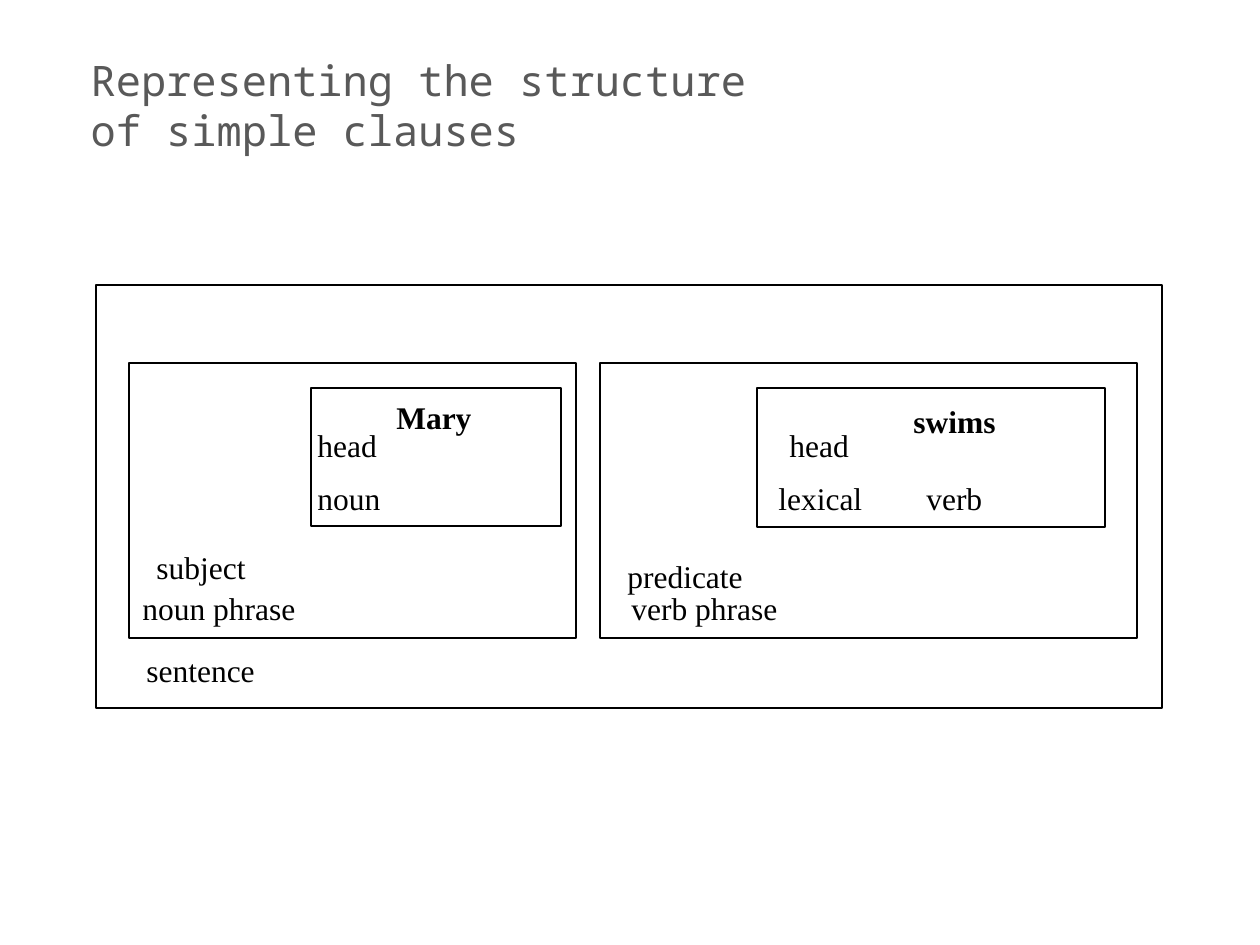
from pptx import Presentation
from pptx import util as u
from pptx.dml.color import RGBColor
from pptx.enum import shapes, text

PX = 914400 / 126
SERIF = "Times New Roman"
ROW = 63


def px(*nums):
    return [u.Emu(round(n * PX)) for n in nums]


def paint(color, code):
    color.rgb = RGBColor.from_string(code)


def style(par, face, size, code, bold=False):
    par.alignment = text.PP_ALIGN.LEFT
    par.font.name = face
    par.font.size = u.Pt(size)
    par.font.bold = bold
    paint(par.font.color, code)


def title(slide, box, words):
    shape = slide.shapes.title
    shape.left, shape.top, shape.width, shape.height = px(*box)
    frame = shape.text_frame
    frame.text = words
    frame.word_wrap = True
    frame.auto_size = text.MSO_AUTO_SIZE.NONE
    frame.vertical_anchor = text.MSO_ANCHOR.MIDDLE
    style(frame.paragraphs[0], "Noto Sans Mono", 24, "595959")


def label(slide, box, words, bold=False):
    frame = slide.shapes.add_textbox(*px(*box)).text_frame
    frame.word_wrap = True
    frame.text = words
    style(frame.paragraphs[0], SERIF, 18, "000000", bold)


def unit(slide, box, labels, word=None):
    """Draw one framed unit; labels, and the bold word, are offset from its corner."""
    left, top = box[:2]
    rect = slide.shapes.add_shape(shapes.MSO_SHAPE.RECTANGLE, *px(*box))
    rect.shadow.inherit = False
    rect.fill.background()
    paint(rect.line.color, "000000")
    rect.line.width = u.Pt(1)
    for words, x, y, width in labels:
        label(slide, (left + x, top + y, width, ROW), words, words == word)


def clause(slide, box):
    left, top = box[:2]
    unit(slide, box, [("sentence", 38, 360, 261)])
    unit(slide, (left + 33, top + 78, 447, 275),
         [("subject", 15, 179, 236), ("noun phrase", 1, 220, 229)])
    unit(slide, (left + 504, top + 78, 537, 275),
         [("predicate", 15, 188, 324), ("verb phrase", 19, 220, 219)])
    unit(slide, (left + 215, top + 103, 250, 138),
         [("Mary", 73, 4, 125), ("head", -6, 32, 105), ("noun", -6, 85, 108)],
         "Mary")
    unit(slide, (left + 661, top + 103, 348, 139),
         [("swims", 144, 8, 135), ("head", 20, 32, 105),
          ("lexical", 9, 85, 147), ("verb", 157, 85, 100)],
         "swims")


def main():
    deck = Presentation()
    deck.slide_width, deck.slide_height = px(1260, 945)
    slide = deck.slides.add_slide(deck.slide_layouts[5])
    title(slide, (78, 0, 688, 210), "Representing the structure of simple clauses")
    clause(slide, (96, 285, 1066, 423))
    deck.save("out.pptx")


if __name__ == "__main__":
    main()
